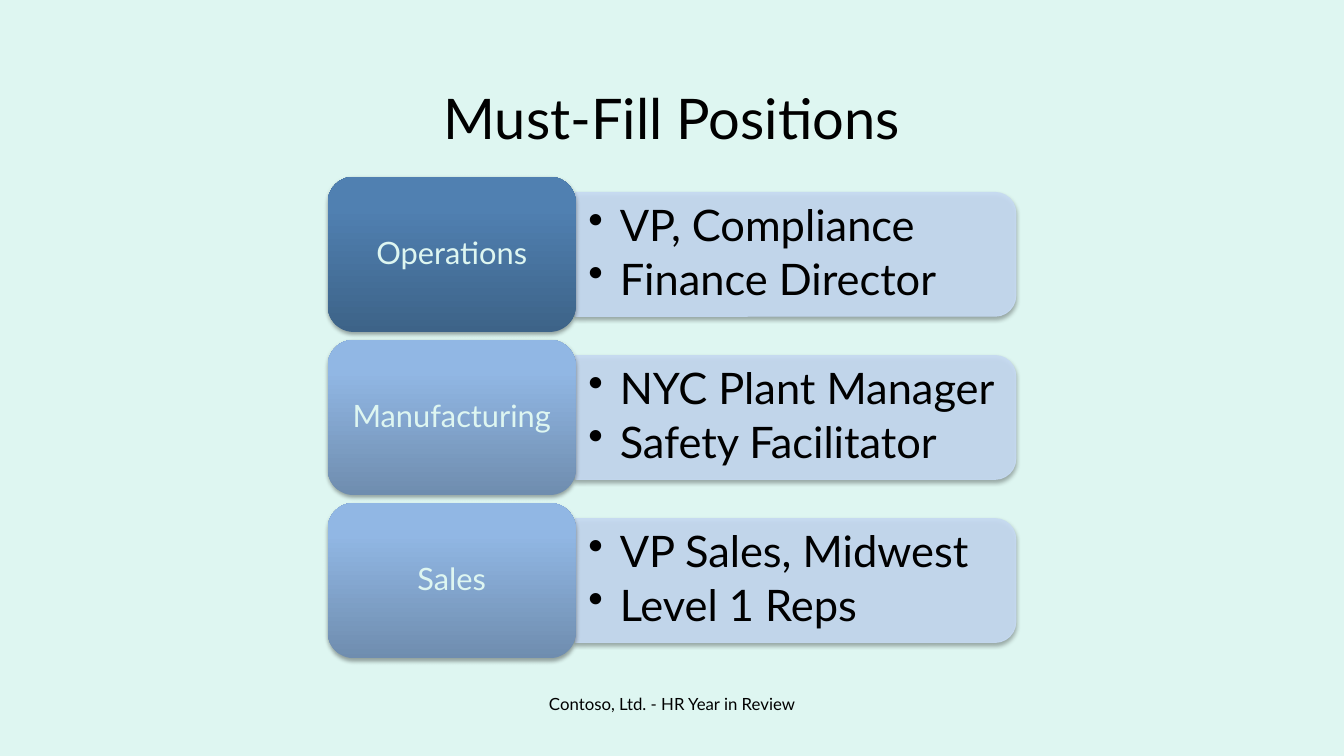
from dataclasses import dataclass

from lxml.etree import SubElement
from pptx import Presentation
from pptx.dml.color import RGBColor
from pptx.enum.shapes import MSO_SHAPE as Preset
from pptx.enum.text import MSO_ANCHOR as Anchor, PP_ALIGN as Align
from pptx.oxml import parse_xml
from pptx.oxml.ns import nsdecls, qn
from pptx.util import Cm, Pt


@dataclass(frozen=True)
class Theme:
    """Colours, font and type sizes of the slide."""
    font: str = "Lato"
    background: str = "DEF6F1"
    ink: str = "000000"
    bar: str = "C6DAF2"
    dark_card: tuple = ("3D6388", "5080B1", "4E81B3")
    light_card: tuple = ("6F8DAF", "91B7E4", "90B8E7")
    title_size: float = 40
    role_size: float = 31
    department_size: float = 22
    footer_size: float = 12


THEME = Theme()
DEPARTMENTS = [
    ("Operations", ["VP, Compliance", "Finance Director"], THEME.dark_card),
    ("Manufacturing", ["NYC Plant Manager", "Safety Facilitator"], THEME.light_card),
    ("Sales", ["VP Sales, Midwest", "Level 1 Reps"], THEME.light_card),
]
FIRST_CENTRE, ROW_PITCH = 6.41, 4.11
CARD_LEFT, CARD_WIDTH, CARD_HEIGHT = 8.26, 6.25, 3.91
BAR_LEFT, BAR_LENGTH, BAR_THICKNESS = 14.5, 11.1, 3.12
ROLES_WIDTH, ROLES_HEIGHT = 10.95, 2.82


def add_run(paragraph, text, size, color):
    """Add one styled run to a paragraph."""
    run = paragraph.add_run()
    run.text = text
    run.font.name, run.font.size = THEME.font, Pt(size)
    run.font.color.rgb = RGBColor.from_string(color)


def set_frame(frame, side, end, anchor):
    """Set wrapping, insets in centimetres and the vertical anchor."""
    frame.word_wrap = True
    frame.margin_left = frame.margin_right = Cm(side)
    frame.margin_top = frame.margin_bottom = Cm(end)
    frame.vertical_anchor = anchor


def write_centred(frame, text, size, color):
    """Write a single centred line and return its paragraph."""
    paragraph = frame.paragraphs[0]
    paragraph.alignment = Align.CENTER
    add_run(paragraph, text, size, color)
    return paragraph


def add_soft_shadow(shape):
    """Give a shape a short shadow that falls downwards."""
    shape.shadow.inherit = False
    effects = shape._element.spPr.find(qn("a:effectLst"))
    effects.append(parse_xml(
        f'<a:outerShdw {nsdecls("a")} blurRad="40000" dist="23000" dir="5400000" '
        f'rotWithShape="0"><a:srgbClr val="{THEME.ink}"><a:alpha val="35000"/>'
        '</a:srgbClr></a:outerShdw>'))


def add_bar(slide, centre):
    """Add the pale bar, rounded at its right end, behind the roles."""
    left = BAR_LEFT + (BAR_LENGTH - BAR_THICKNESS) / 2
    bar = slide.shapes.add_shape(
        Preset.ROUND_2_SAME_RECTANGLE, Cm(left), Cm(centre - BAR_LENGTH / 2),
        Cm(BAR_THICKNESS), Cm(BAR_LENGTH))
    bar.rotation = 90
    bar.line.width = Pt(0.75)
    bar.fill.solid()
    for paint in (bar.fill.fore_color, bar.line.color):
        paint.rgb = RGBColor.from_string(THEME.bar)
    for color in bar._element.spPr.iter(qn("a:srgbClr")):
        SubElement(color, qn("a:alpha"), val="90000")
    add_soft_shadow(bar)


def add_roles(slide, centre, roles):
    """Add the bulleted open roles of one department."""
    box = slide.shapes.add_textbox(
        Cm(BAR_LEFT), Cm(centre - ROLES_HEIGHT / 2), Cm(ROLES_WIDTH), Cm(ROLES_HEIGHT))
    frame = box.text_frame
    set_frame(frame, 0.33, 0.16, Anchor.MIDDLE)
    for index, role in enumerate(roles):
        paragraph = frame.add_paragraph() if index else frame.paragraphs[0]
        properties = paragraph._p.get_or_add_pPr()
        properties.set("marL", str(Cm(0.79)))
        properties.set("indent", str(-Cm(0.79)))
        SubElement(properties, qn("a:buChar"), char="•")
        paragraph.level = 1
        paragraph.line_spacing = 0.9
        paragraph.space_after = Pt(THEME.role_size * 0.15)
        add_run(paragraph, role, THEME.role_size, THEME.ink)


def add_card(slide, centre, department, shades):
    """Add the gradient card that names a department."""
    card = slide.shapes.add_shape(
        Preset.ROUNDED_RECTANGLE, Cm(CARD_LEFT), Cm(centre - CARD_HEIGHT / 2),
        Cm(CARD_WIDTH), Cm(CARD_HEIGHT))
    card.line.fill.background()
    card.fill.gradient()
    gradient = card._element.spPr.find(qn("a:gradFill"))
    stops = "".join(
        f'<a:gs pos="{position}"><a:srgbClr val="{shade}"/></a:gs>'
        for position, shade in zip((0, 80000, 100000), shades))
    gradient.getparent().replace(gradient, parse_xml(
        f'<a:gradFill {nsdecls("a")} rotWithShape="1"><a:gsLst>{stops}</a:gsLst>'
        '<a:lin ang="16200000" scaled="0"/></a:gradFill>'))
    add_soft_shadow(card)
    set_frame(card.text_frame, 0.23, 0.13, Anchor.MIDDLE)
    label = write_centred(
        card.text_frame, department, THEME.department_size, THEME.background)
    label.line_spacing = 0.9


def add_title(slide, text):
    """Place and fill the title placeholder."""
    title = slide.shapes.title
    title.left, title.top, title.width, title.height = (
        Cm(5.36), Cm(1.27), Cm(23.14), Cm(3.38))
    set_frame(title.text_frame, 0.25, 0.13, Anchor.MIDDLE)
    write_centred(title.text_frame, text, THEME.title_size, THEME.ink)


def add_footer(slide, text):
    """Add the centred footer line."""
    footer = slide.shapes.add_textbox(Cm(11.58), Cm(17.35), Cm(10.72), Cm(1.32))
    set_frame(footer.text_frame, 0.25, 0.13, Anchor.TOP)
    write_centred(footer.text_frame, text, THEME.footer_size, THEME.ink)


def main():
    """Build the slide and save it."""
    deck = Presentation()
    deck.slide_width, deck.slide_height = Cm(33.87), Cm(19.05)
    slide = deck.slides.add_slide(deck.slide_layouts.get_by_name("Title Only"))
    slide.background.fill.solid()
    slide.background.fill.fore_color.rgb = RGBColor.from_string(THEME.background)
    add_title(slide, "Must-Fill Positions")
    for row, (department, roles, shades) in enumerate(DEPARTMENTS):
        centre = FIRST_CENTRE + row * ROW_PITCH
        add_bar(slide, centre)
        add_roles(slide, centre, roles)
        add_card(slide, centre, department, shades)
    add_footer(slide, "Contoso, Ltd. - HR Year in Review")
    deck.save("out.pptx")


if __name__ == "__main__":
    main()
